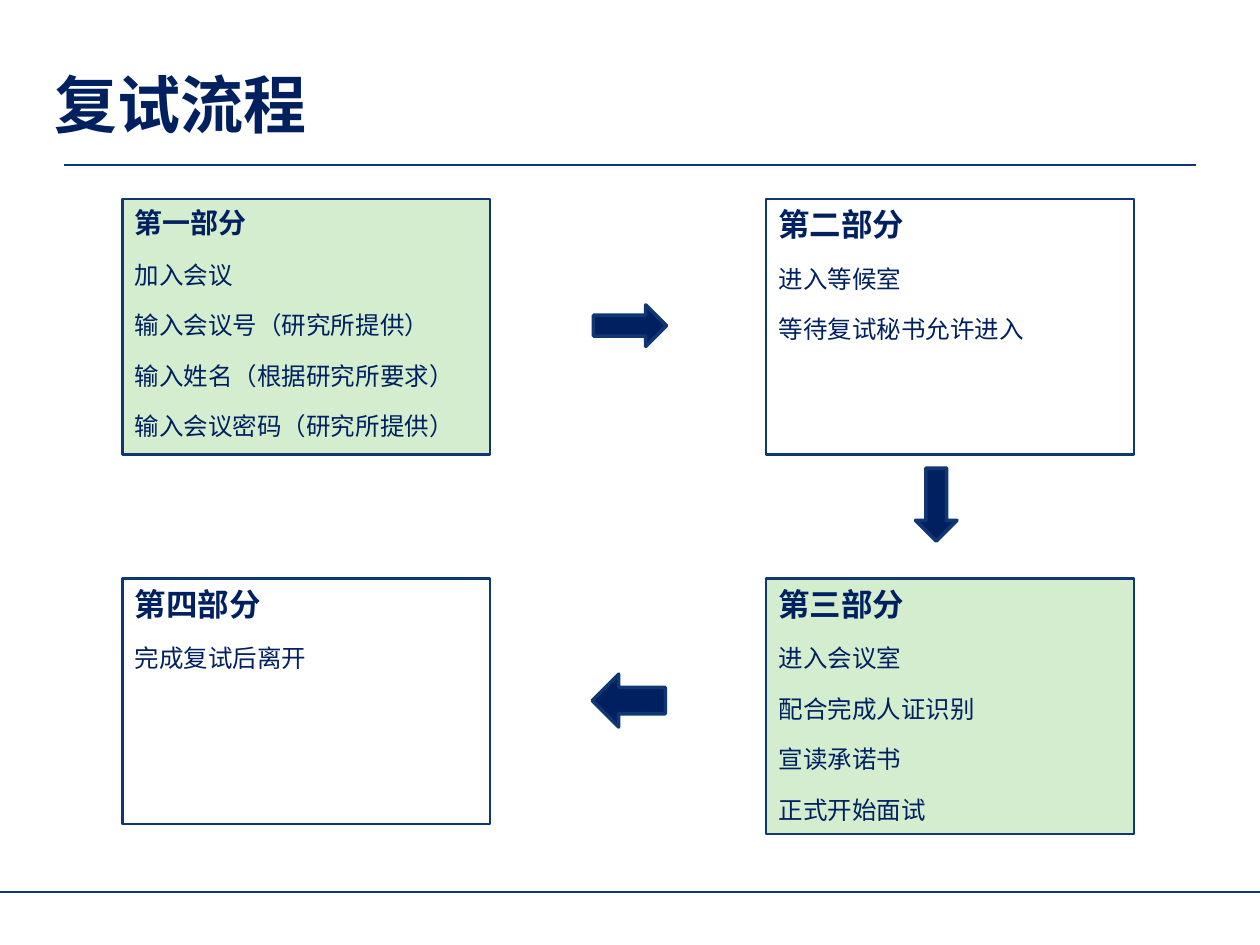
from lxml.etree import SubElement
from pptx import Presentation
from pptx.dml.color import RGBColor
from pptx.enum.shapes import MSO_CONNECTOR, MSO_SHAPE
from pptx.enum.text import MSO_ANCHOR, MSO_AUTO_SIZE, PP_ALIGN
from pptx.oxml.ns import qn
from pptx.util import Inches, Pt

NAVY = RGBColor(0x00, 0x20, 0x60)
LINE_BLUE = RGBColor(0x0F, 0x37, 0x74)
GREEN = RGBColor(0xD3, 0xED, 0xCE)
FONT = "Calibri"

# Grid of the four steps
LEFT, RIGHT = 0.97, 6.08
TOP, BOTTOM = 1.58, 4.59
BOX_WIDTH, BOX_HEIGHT = 2.92, 2.03

# left, top, height, fill, heading size, heading, lines
STEPS = [
    (LEFT, TOP, BOX_HEIGHT, GREEN, 16, "第一部分",
     ["加入会议", "输入会议号（研究所提供）",
      "输入姓名（根据研究所要求）", "输入会议密码（研究所提供）"]),
    (RIGHT, TOP, BOX_HEIGHT, None, 18, "第二部分",
     ["进入等候室", "等待复试秘书允许进入"]),
    (RIGHT, BOTTOM, BOX_HEIGHT, GREEN, 18, "第三部分",
     ["进入会议室", "配合完成人证识别", "宣读承诺书", "正式开始面试"]),
    (LEFT, BOTTOM, 1.95, None, 18, "第四部分", ["完成复试后离开"]),
]

# preset, left, top, width, height, rotation
ARROWS = [
    (MSO_SHAPE.RIGHT_ARROW, 4.71, 2.42, 0.58, 0.33, 0),
    (MSO_SHAPE.RIGHT_ARROW, 7.14, 3.84, 0.58, 0.33, 90),
    (MSO_SHAPE.DOWN_ARROW, 4.78, 5.27, 0.42, 0.58, 90),
]


def style_font(font, size, bold):
    font.name = FONT
    font.size = Pt(size)
    font.bold = bold
    font.color.rgb = NAVY


def add_rule(page, left, right, y):
    rule = page.shapes.add_connector(
        MSO_CONNECTOR.STRAIGHT, Inches(left), Inches(y), Inches(right), Inches(y))
    rule.line.color.rgb = LINE_BLUE
    rule.line.width = Pt(1)
    SubElement(rule._element.spPr, qn("a:effectLst"))


def set_title(page, text):
    title = page.shapes.title
    title.left, title.top = Inches(0.33), Inches(0.42)
    title.width, title.height = Inches(8.5), Inches(0.74)
    frame = title.text_frame
    frame.text = text
    frame.auto_size = MSO_AUTO_SIZE.NONE
    frame.vertical_anchor = MSO_ANCHOR.BOTTOM
    frame.margin_bottom = Inches(0.04)
    para = frame.paragraphs[0]
    para.alignment = PP_ALIGN.LEFT
    style_font(para.runs[0].font, 36, True)


def add_outlined_shape(page, preset, left, top, width, height, fill, line_width):
    shape = page.shapes.add_shape(
        preset, Inches(left), Inches(top), Inches(width), Inches(height))
    shape.shadow.inherit = False
    if fill is None:
        shape.fill.background()
    else:
        shape.fill.solid()
        shape.fill.fore_color.rgb = fill
    shape.line.color.rgb = LINE_BLUE
    shape.line.width = Pt(line_width)
    return shape


def add_step(page, left, top, height, fill, heading_size, heading, lines):
    box = add_outlined_shape(
        page, MSO_SHAPE.RECTANGLE, left, top, BOX_WIDTH, height, fill, 1.5)
    frame = box.text_frame
    frame.word_wrap = True
    frame.vertical_anchor = MSO_ANCHOR.TOP
    frame.text = "\n".join([heading, *lines])
    for index, para in enumerate(frame.paragraphs):
        is_heading = index == 0
        para.alignment = PP_ALIGN.LEFT
        para.space_before = Pt(0 if is_heading else 12)
        style_font(para.runs[0].font, heading_size if is_heading else 14, is_heading)


def add_arrow(page, preset, left, top, width, height, rotation):
    arrow = add_outlined_shape(page, preset, left, top, width, height, NAVY, 2)
    arrow.rotation = rotation


def main():
    deck = Presentation()
    deck.slide_width, deck.slide_height = Inches(10), Inches(7.5)
    page = deck.slides.add_slide(deck.slide_layouts[5])

    # Title and rules
    add_rule(page, 0, 10, 7.08)
    add_rule(page, 0.51, 9.49, 1.31)
    set_title(page, "复试流程")

    # Steps and the arrows between them
    for step in STEPS:
        add_step(page, *step)
    for arrow in ARROWS:
        add_arrow(page, *arrow)

    deck.save("out.pptx")


if __name__ == "__main__":
    main()
